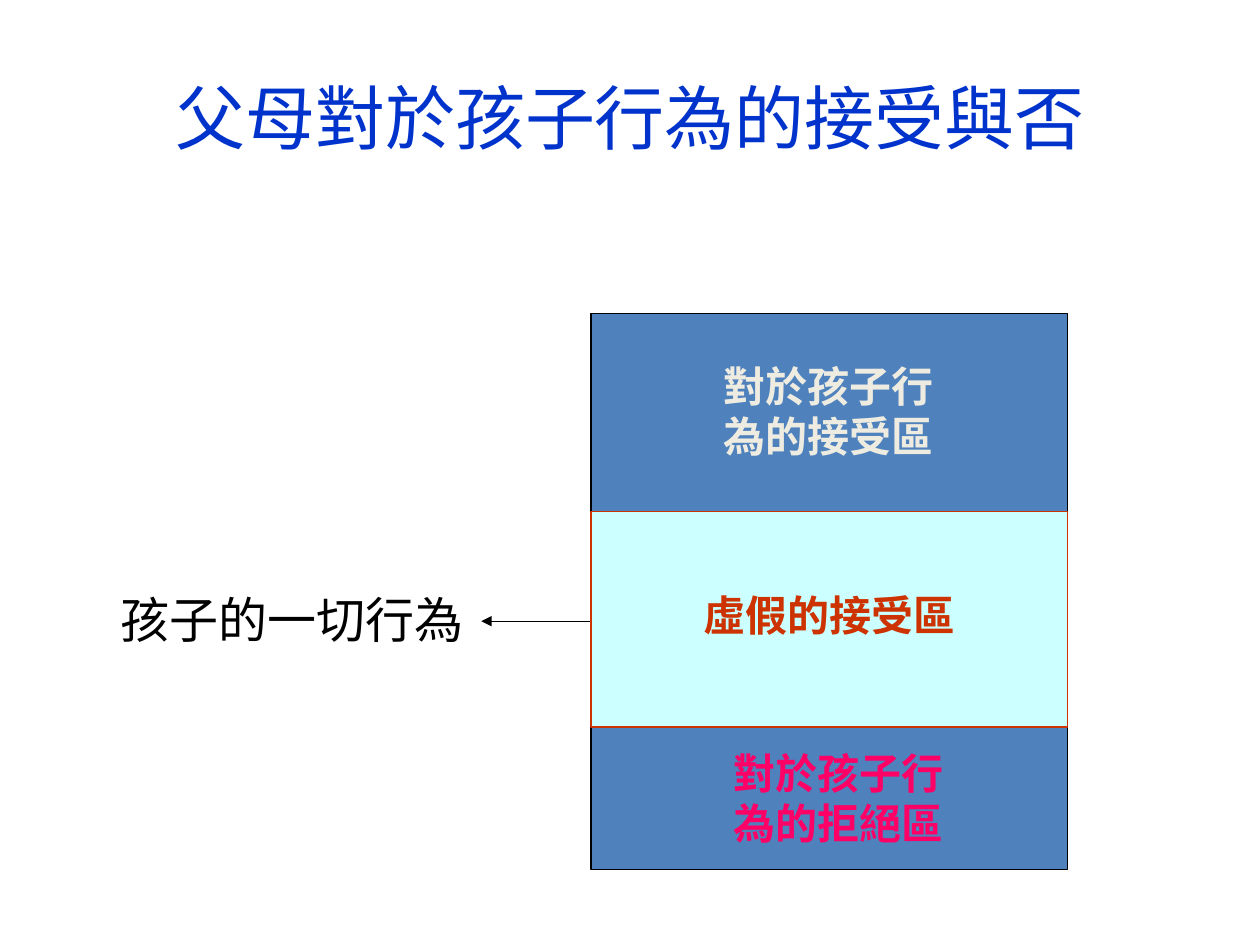
from lxml import etree
from pptx import Presentation
from pptx.dml.color import RGBColor
from pptx.enum import shapes, text
from pptx.oxml.ns import qn
from pptx.util import Inches, Pt

BLACK = RGBColor(0x00, 0x00, 0x00)
TITLE_BLUE = RGBColor(0x00, 0x33, 0xCC)
ZONE_BLUE = RGBColor(0x4F, 0x81, 0xBD)
PALE_CYAN = RGBColor(0xCC, 0xFF, 0xFF)
CREAM = RGBColor(0xEE, 0xEC, 0xE1)
RUST = RGBColor(0xCC, 0x33, 0x00)
PINK = RGBColor(0xFF, 0x00, 0x66)


def write_text(shape, content, size=24, font="Calibri", color=BLACK, bold=False,
               align=text.PP_ALIGN.CENTER, anchor=text.MSO_ANCHOR.MIDDLE):
    frame = shape.text_frame
    frame.word_wrap = True
    frame.vertical_anchor = anchor
    paragraph = frame.paragraphs[0]
    paragraph.alignment = align
    run = paragraph.add_run()
    run.text = content
    run.font.size = Pt(size)
    run.font.name = font
    run.font.bold = bold
    run.font.color.rgb = color


def add_text(slide, left, top, width, height, content, **style):
    box = slide.shapes.add_textbox(
        Inches(left), Inches(top), Inches(width), Inches(height))
    write_text(box, content, **style)


def add_panel(slide, left, top, width, height, fill, line):
    panel = slide.shapes.add_shape(
        shapes.MSO_SHAPE.RECTANGLE,
        Inches(left), Inches(top), Inches(width), Inches(height))
    panel.shadow.inherit = False
    panel.fill.solid()
    panel.fill.fore_color.rgb = fill
    panel.line.color.rgb = line
    panel.line.width = Pt(0.75)
    return panel


def add_arrow(slide, start_x, end_x, y):
    arrow = slide.shapes.add_connector(
        shapes.MSO_CONNECTOR.STRAIGHT,
        Inches(start_x), Inches(y), Inches(end_x), Inches(y))
    arrow.line.color.rgb = BLACK
    arrow.line.width = Pt(0.75)
    line = arrow.line._get_or_add_ln()
    etree.SubElement(line, qn("a:tailEnd"), type="triangle")
    etree.SubElement(arrow._element.spPr, qn("a:effectLst"))


def add_behavior_zones(slide, left, top, width, height):
    """Behavior rectangle with its three zones, and the arrow to its label."""
    add_panel(slide, left, top, width, height, ZONE_BLUE, BLACK)
    add_text(slide, left - 3.83, top + 2.14, 3.4, 0.57, "孩子的一切行為",
             size=28, align=text.PP_ALIGN.LEFT)
    add_arrow(slide, left + width, left - 0.87, top + 2.44)
    add_text(slide, left + 0.94, top + 0.32, 1.89, 0.9, "對於孩子行為的接受區",
             color=CREAM, bold=True)
    add_text(slide, left + 1.02, top + 3.39, 1.89, 0.9, "對於孩子行為的拒絕區",
             color=PINK, bold=True)
    false_zone = add_panel(slide, left, top + 1.57, width, 1.71, PALE_CYAN, RUST)
    false_zone.text_frame.margin_bottom = Inches(0.12)
    write_text(false_zone, "虛假的接受區", color=RUST, bold=True)


def main():
    presentation = Presentation()
    presentation.slide_width = Inches(10)
    presentation.slide_height = Inches(7.5)
    slide = presentation.slides.add_slide(presentation.slide_layouts[6])
    add_text(slide, 0.5, 0.3, 9, 1.25, "父母對於孩子行為的接受與否",
             size=40, font="Noto Sans CJK JP", color=TITLE_BLUE)
    add_behavior_zones(slide, 4.69, 2.49, 3.78, 4.41)
    presentation.save("out.pptx")


if __name__ == "__main__":
    main()
